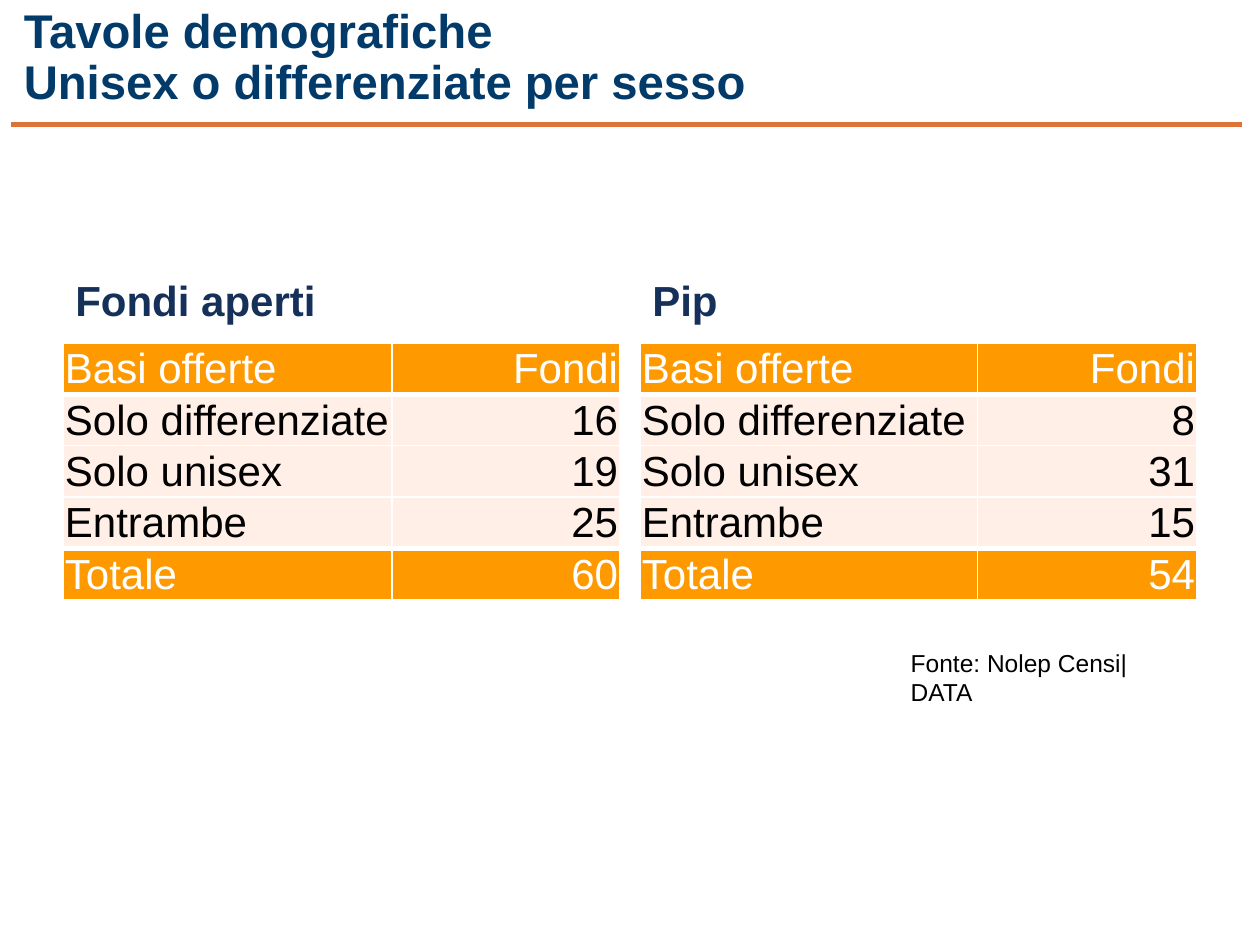
from lxml import etree
from pptx import Presentation, util as u
from pptx.dml.color import RGBColor
from pptx.enum import shapes, text
from pptx.oxml.ns import qn

ORANGE, PALE, WHITE, BLACK = "FF9900", "FFEFE7", "FFFFFF", "000000"


def colour(value):
    return RGBColor.from_string(value)


class SlideBuilder:
    """Holds the style and the current slide, and adds elements to it."""

    def __init__(self, slide, font="Arial"):
        self.slide = slide
        self.font = font

    def format(self, paragraph, size, value, bold=False):
        for run in paragraph.runs:
            run.font.name = self.font
            run.font.size = u.Pt(size)
            run.font.bold = bold
            run.font.color.rgb = colour(value)

    def line(self, left, right, top, value, width):
        connector = self.slide.shapes.add_connector(
            shapes.MSO_CONNECTOR.STRAIGHT, u.Cm(left), u.Cm(top), u.Cm(right), u.Cm(top))
        connector.line.color.rgb = colour(value)
        connector.line.width = u.Pt(width)
        etree.SubElement(connector._element.spPr, qn("a:effectLst"))

    def text(self, content, box, size, value, bold=False, wrap=True,
             anchor=text.MSO_ANCHOR.BOTTOM):
        shape = self.slide.shapes.add_textbox(*map(u.Cm, box))
        frame = shape.text_frame
        frame.text = content
        frame.word_wrap = wrap
        frame.vertical_anchor = anchor
        paragraph = frame.paragraphs[0]
        self.format(paragraph, size, value, bold)
        return paragraph

    def border(self, cell, sides):
        properties = cell._tc.get_or_add_tcPr()
        for index, (side, width) in enumerate(sides.items()):
            edge = etree.Element(qn(f"a:ln{side}"), w=str(u.Pt(width)))
            fill = etree.SubElement(edge, qn("a:solidFill"))
            etree.SubElement(fill, qn("a:srgbClr"), val=WHITE)
            properties.insert(index, edge)

    def table(self, rows, left, top, widths, row_height):
        table = self.slide.shapes.add_table(
            len(rows), len(widths), u.Cm(left), u.Cm(top),
            u.Cm(sum(widths)), u.Cm(row_height * len(rows))).table
        for column, width in zip(table.columns, widths):
            column.width = u.Cm(width)
        last = len(rows) - 1
        for row, values in enumerate(rows):
            strong = row in (0, last)
            for column, value in enumerate(values):
                cell = table.cell(row, column)
                cell.text = str(value)
                cell.margin_left = cell.margin_right = u.Cm(0.04)
                cell.margin_top, cell.margin_bottom = u.Cm(0.02), 0
                cell.vertical_anchor = text.MSO_ANCHOR.MIDDLE
                cell.fill.solid()
                cell.fill.fore_color.rgb = colour(ORANGE if strong else PALE)
                self.border(cell, {"L": 1, "R": 1, "T": 3 if row == last else 1,
                                   "B": 3 if row == 0 else 1})
                paragraph = cell.text_frame.paragraphs[0]
                paragraph.alignment = text.PP_ALIGN.RIGHT if column else text.PP_ALIGN.LEFT
                self.format(paragraph, 24, WHITE if strong else BLACK)


def main():
    presentation = Presentation()
    presentation.slide_width, presentation.slide_height = u.Cm(25.4), u.Cm(19.05)
    builder = SlideBuilder(presentation.slides.add_slide(presentation.slide_layouts[6]))

    builder.line(0.23, 25.04, 2.51, "DE7338", 3)
    title = builder.text("Tavole demografiche\vUnisex o differenziate per sesso",
                         (0.23, 0.33, 22.28, 2.01), 27, "023B6A", bold=True)
    title.line_spacing = 0.9

    labels = ("Basi offerte", "Solo differenziate", "Solo unisex", "Entrambe", "Totale")
    panels = (
        ("Fondi aperti", 1.27, (6.63, 4.6), ("Fondi", 16, 19, 25, 60)),
        ("Pip", 12.9, (6.81, 4.42), ("Fondi", 8, 31, 15, 54)),
    )
    for heading, left, widths, values in panels:
        paragraph = builder.text(heading, (left, 4.9, sum(widths), 1.78), 24, "153059", bold=True)
        paragraph.alignment = text.PP_ALIGN.JUSTIFY
        paragraph.space_after = u.Pt(6)
        builder.table(list(zip(labels, values)), left, 6.91, widths, 0.97)

    builder.text("Fonte: Nolep Censi|DATA", (18.11, 12.93, 6.1, 0.86), 14, BLACK,
                 wrap=False, anchor=text.MSO_ANCHOR.TOP)
    presentation.save("out.pptx")


if __name__ == "__main__":
    main()
